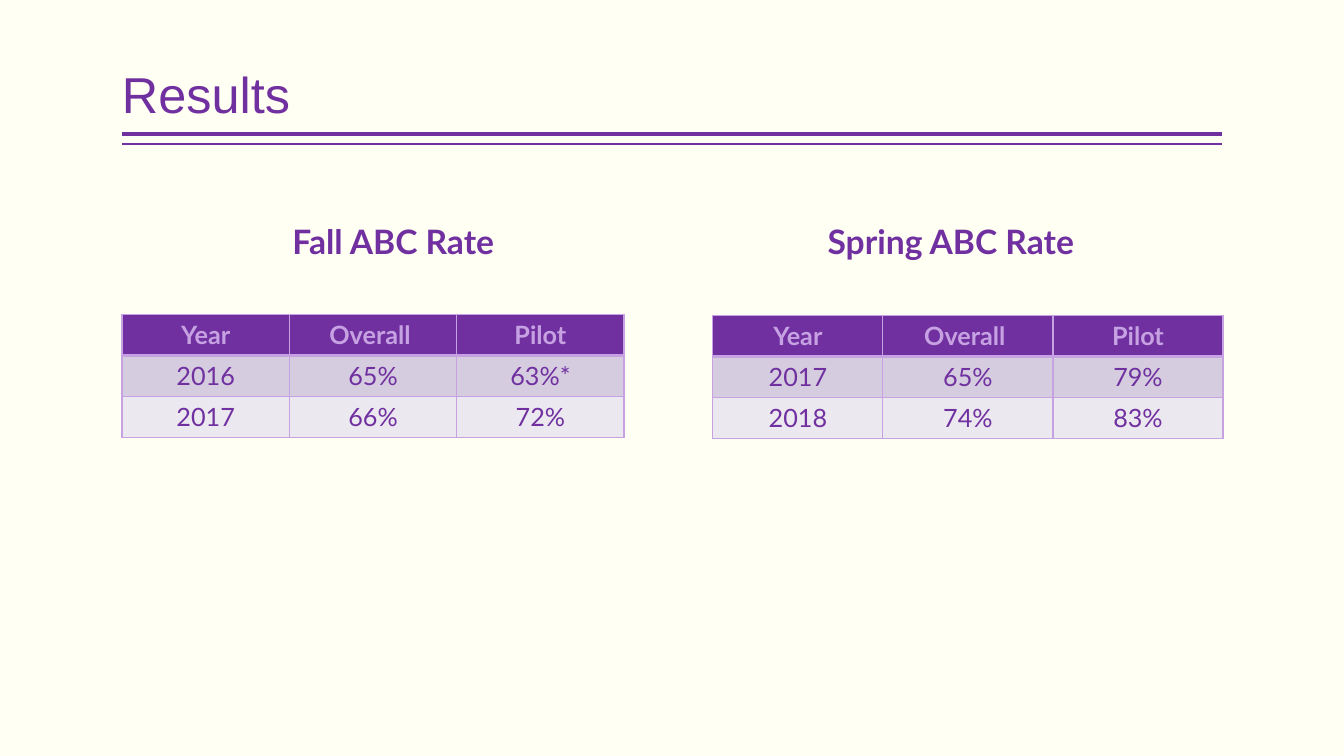
from dataclasses import dataclass

import pptx
import pptx.dml.color
import pptx.enum.shapes
import pptx.enum.text
import pptx.oxml.ns
import pptx.util
from lxml import etree

PURPLE = pptx.dml.color.RGBColor(0x70, 0x30, 0xA0)
LILAC = pptx.dml.color.RGBColor(0xC7, 0xA2, 0xE3)
BAND_DARK = pptx.dml.color.RGBColor(0xD5, 0xCD, 0xDF)
BAND_LIGHT = pptx.dml.color.RGBColor(0xEB, 0xE8, 0xF0)
IVORY = pptx.dml.color.RGBColor(0xFF, 0xFF, 0xF3)

# The slide is a grid of 100 columns by 100 rows.
WIDTH, HEIGHT = pptx.util.Inches(13.33), pptx.util.Inches(7.5)
MARGIN = 9.08
CONTENT_WIDTH = 100 - 2 * MARGIN
HEADING_WIDTH = 40.36
TABLE_ROW = 5.42
HEADER = ("Year", "Overall ", "Pilot")
THIN, THICK = pptx.util.Pt(1), pptx.util.Pt(3)


@dataclass
class Rule:
    row: float
    weight: int


@dataclass
class Panel:
    heading: str
    heading_left: float
    table_left: float
    table_top: float
    table_width: float
    rates: tuple[tuple[str, ...], ...]


RULES = (Rule(17.73, THICK), Rule(19.07, THIN))
PANELS = (
    Panel("Fall ABC Rate", MARGIN, MARGIN, 41.6, 37.36,
          (("2016", "65%", "63%*"), ("2017", "66%", "72%"))),
    Panel("Spring ABC Rate", 100 - MARGIN - HEADING_WIDTH, 53.04, 41.73, 37.96,
          (("2017", "65%", "79%"), ("2018", "74%", "83%"))),
)


def cols(n: float) -> int:
    return round(WIDTH * n / 100)


def rows(n: float) -> int:
    return round(HEIGHT * n / 100)


def format_paragraph(p, font: str, size: float, color, bold: bool, align) -> None:
    p.alignment = align
    for r in p.runs:
        r.font.name = font
        r.font.size = pptx.util.Pt(size)
        r.font.bold = bold
        r.font.color.rgb = color


def add_rule(s, rule: Rule) -> None:
    line = s.shapes.add_connector(
        pptx.enum.shapes.MSO_CONNECTOR.STRAIGHT,
        cols(100 - MARGIN), rows(rule.row), cols(MARGIN), rows(rule.row))
    line.line.color.rgb = PURPLE
    line.line.width = rule.weight
    etree.SubElement(line._element.spPr, pptx.oxml.ns.qn("a:effectLst"))


def add_text(s, text: str, left: float, top: float, width: float, height: float,
             font: str, size: float, bold: bool, align) -> None:
    sp = s.shapes.add_textbox(cols(left), rows(top), cols(width), rows(height))
    tf = sp.text_frame
    tf.word_wrap = True
    tf.margin_left = tf.margin_right = 0
    tf.vertical_anchor = pptx.enum.text.MSO_ANCHOR.BOTTOM
    tf.text = text
    p = tf.paragraphs[0]
    p.line_spacing = 0.9
    format_paragraph(p, font, size, PURPLE, bold, align)


def add_borders(cell, top: int, bottom: int) -> None:
    qn = pptx.oxml.ns.qn
    tc_pr = cell._tc.get_or_add_tcPr()
    for side, weight in (("L", THIN), ("R", THIN), ("T", top), ("B", bottom)):
        ln = etree.SubElement(tc_pr, qn(f"a:ln{side}"), w=str(weight))
        fill = etree.SubElement(ln, qn("a:solidFill"))
        etree.SubElement(fill, qn("a:srgbClr"), val=str(LILAC))


def add_rate_table(s, panel: Panel) -> None:
    content = (HEADER, *panel.rates)
    table = s.shapes.add_table(
        len(content), len(HEADER), cols(panel.table_left), rows(panel.table_top),
        cols(panel.table_width), rows(TABLE_ROW * len(content))).table
    table.horz_banding = False
    for i, values in enumerate(content):
        for j, value in enumerate(values):
            cell = table.cell(i, j)
            cell.text = value
            add_borders(cell, THICK if i == 1 else THIN, THICK if i == 0 else THIN)
            cell.fill.solid()
            cell.fill.fore_color.rgb = (PURPLE, BAND_DARK, BAND_LIGHT)[i]
            format_paragraph(cell.text_frame.paragraphs[0], "Lato", 18,
                             LILAC if i == 0 else PURPLE, i == 0,
                             pptx.enum.text.PP_ALIGN.CENTER)


def main() -> None:
    prs = pptx.Presentation()
    prs.slide_width, prs.slide_height = WIDTH, HEIGHT
    s = prs.slides.add_slide(prs.slide_layouts[6])
    s.background.fill.solid()
    s.background.fill.fore_color.rgb = IVORY

    for rule in RULES:
        add_rule(s, rule)
    add_text(s, "Results", MARGIN, 1.07, CONTENT_WIDTH, 16, "Arial", 36, False,
             pptx.enum.text.PP_ALIGN.LEFT)
    for panel in PANELS:
        add_text(s, panel.heading, panel.heading_left, 23.33, HEADING_WIDTH, 12,
                 "Lato", 24, True, pptx.enum.text.PP_ALIGN.CENTER)
        add_rate_table(s, panel)
    prs.save("out.pptx")


if __name__ == "__main__":
    main()
